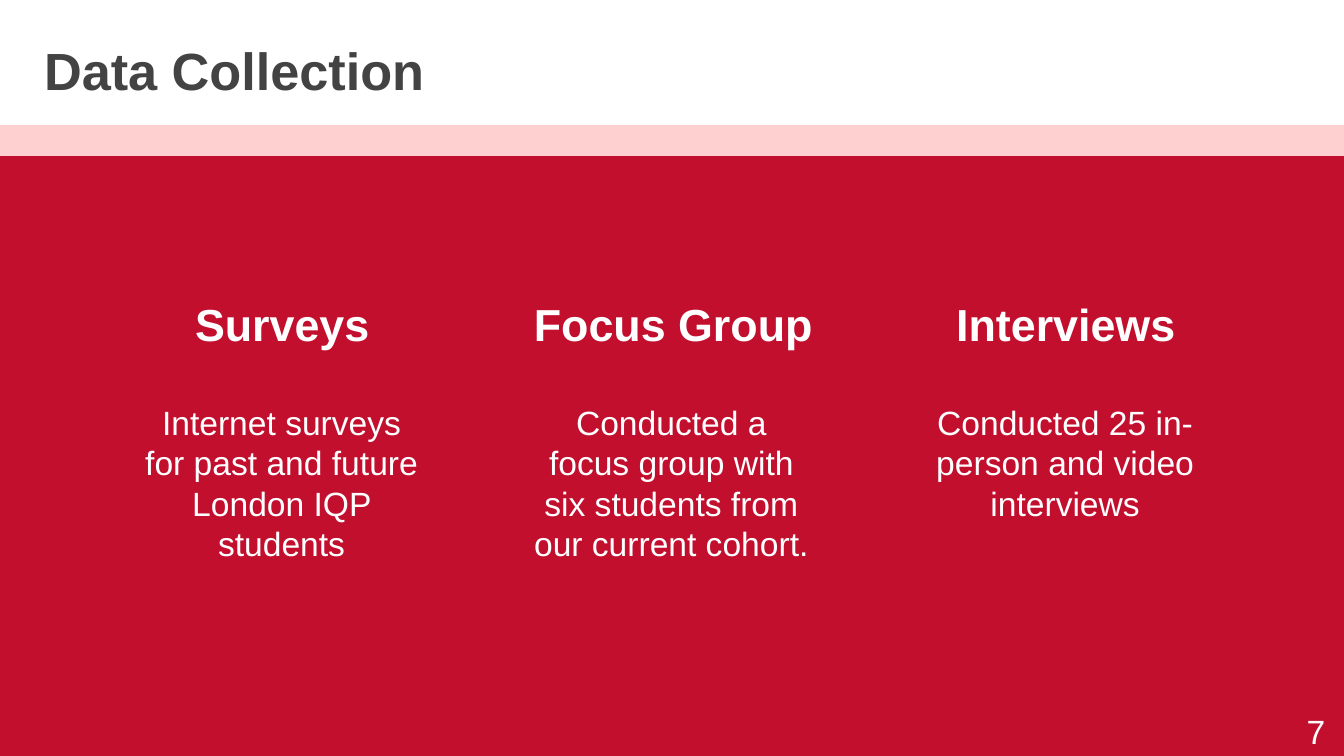
from dataclasses import dataclass

from pptx import Presentation
from pptx.dml.color import RGBColor
from pptx.enum.shapes import MSO_SHAPE as Preset
from pptx.enum.text import MSO_ANCHOR as Anchor, PP_ALIGN as Align
from pptx.util import Inches, Pt


@dataclass(frozen=True)
class Theme:
    font: str = "Arial"
    red: str = "C20F2E"
    pink: str = "FFD0D0"
    dark: str = "434343"
    white: str = "FFFFFF"
    title_size: int = 28
    heading_size: int = 24
    body_size: int = 18


@dataclass(frozen=True)
class Method:
    heading: str
    heading_left: float
    heading_width: float
    description: str
    body_left: float
    body_height: float = 1.48


THEME = Theme()
SLIDE_WIDTH = Inches(10)
SLIDE_HEIGHT = SLIDE_WIDTH * 9 // 16
METHODS = [
    Method("Surveys", 1.1, 2,
           "Internet surveys for past and future London IQP students", 0.97),
    Method("Focus Group", 3.76, 2.5,
           "Conducted a focus group with six students from our current cohort.", 3.87),
    Method("Interviews", 6.93, 2,
           "Conducted 25 in-person and video interviews", 6.8, 1.78),
]


def add_band(slide, top, height, color):
    shape = slide.shapes.add_shape(Preset.RECTANGLE, 0, top, SLIDE_WIDTH, height)
    shape.shadow.inherit = False
    shape.fill.solid()
    shape.fill.fore_color.rgb = RGBColor.from_string(color)
    shape.line.fill.background()


def add_text(slide, text, left, top, width, height, *, size=THEME.body_size,
             color=THEME.white, bold=False, align=Align.LEFT, anchor=Anchor.TOP):
    shape = slide.shapes.add_textbox(
        Inches(left), Inches(top), Inches(width), Inches(height)
    )
    frame = shape.text_frame
    frame.word_wrap = True
    frame.vertical_anchor = anchor
    frame.margin_left = frame.margin_right = Inches(0.1)
    frame.margin_top = frame.margin_bottom = Inches(0.1)
    paragraph = frame.paragraphs[0]
    paragraph.alignment = align
    run = paragraph.add_run()
    run.text = text
    run.font.name = THEME.font
    run.font.size = Pt(size)
    run.font.bold = bold
    run.font.color.rgb = RGBColor.from_string(color)


def add_method(slide, method):
    add_text(slide, method.heading, method.heading_left, 2, method.heading_width, 0.71,
             size=THEME.heading_size, bold=True, align=Align.CENTER,
             anchor=Anchor.BOTTOM)
    add_text(slide, method.description, method.body_left, 2.89, 2.25,
             method.body_height, align=Align.CENTER)


def main():
    presentation = Presentation()
    presentation.slide_width = SLIDE_WIDTH
    presentation.slide_height = SLIDE_HEIGHT
    slide = presentation.slides.add_slide(presentation.slide_layouts[6])

    add_text(slide, "Data Collection", 0.23, 0.25, 3.19, 0.53,
             size=THEME.title_size, color=THEME.dark, bold=True,
             anchor=Anchor.MIDDLE)
    panel_top = Inches(1.15)
    add_band(slide, panel_top, SLIDE_HEIGHT - panel_top, THEME.red)
    add_band(slide, Inches(0.93), Inches(0.23), THEME.pink)
    for method in METHODS:
        add_method(slide, method)
    add_text(slide, "7", 9.36, 5.19, 0.6, 0.43, align=Align.RIGHT)

    presentation.save("out.pptx")


if __name__ == "__main__":
    main()
